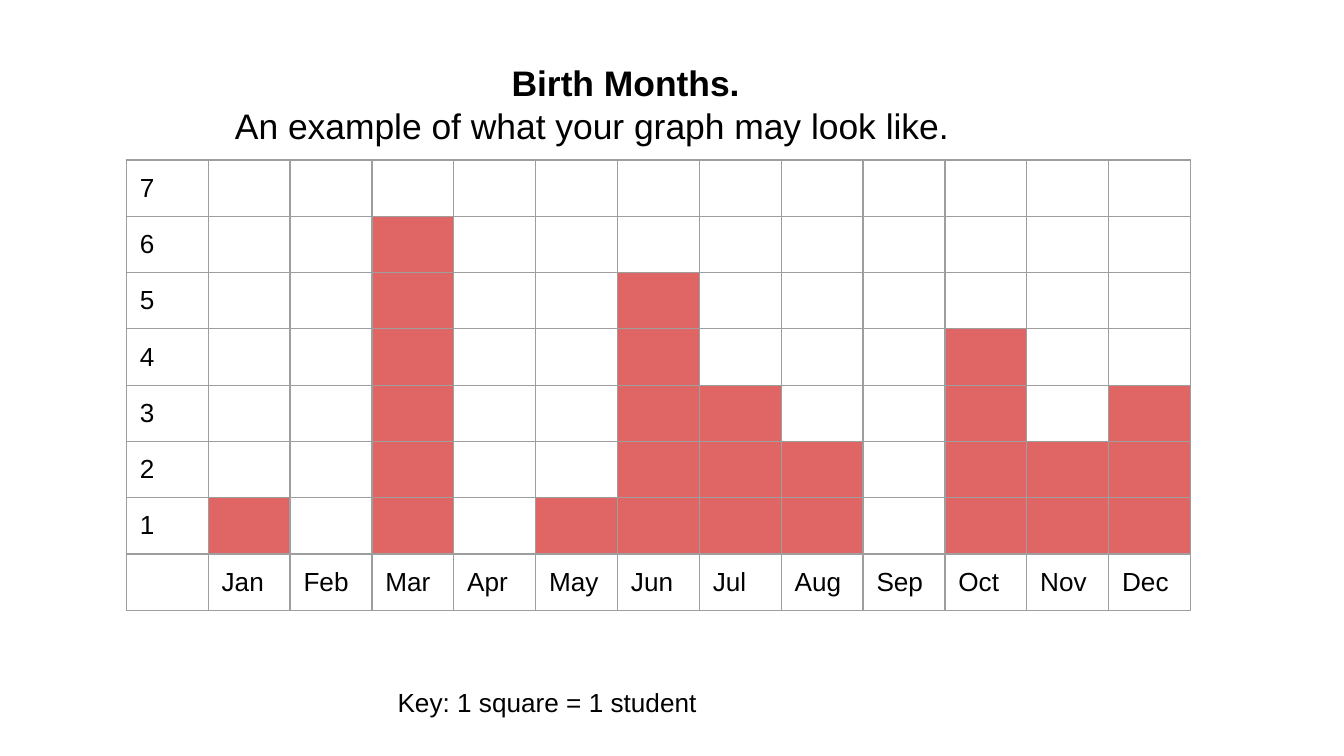
"""Build a birth-month graph from shaded table squares."""
import pptx
import pptx.dml.color
import pptx.enum.text
import pptx.oxml
import pptx.oxml.ns
import pptx.util

Inches = pptx.util.Inches
Pt = pptx.util.Pt
ANCHOR = pptx.enum.text.MSO_ANCHOR
ALIGN = pptx.enum.text.PP_ALIGN
MARGINS = dict.fromkeys(
    ("margin_left", "margin_top", "margin_right", "margin_bottom"), Inches(0.1)
)
BIRTHS = {
    "Jan": 1, "Feb": 0, "Mar": 6, "Apr": 0, "May": 1, "Jun": 5,
    "Jul": 3, "Aug": 2, "Sep": 0, "Oct": 4, "Nov": 2, "Dec": 3,
}
TOP_COUNT = 7


def color(value):
    return pptx.dml.color.RGBColor.from_string(value)


def write(para, text, size, bold=False):
    span = para.add_run()
    span.text = text
    formats = {"name": "Arial", "size": Pt(size), "bold": bold}
    for name, value in formats.items():
        setattr(span.font, name, value)
    span.font.color.rgb = color("000000")


deck = pptx.Presentation()
deck.slide_width = Inches(10)
deck.slide_height = Inches(10 * 9 / 16)
page = deck.slides.add_slide(deck.slide_layouts[6])

columns = len(BIRTHS) + 1
rows = TOP_COUNT + 1
frame = page.shapes.add_table(
    rows, columns, Inches(0.94), Inches(1.19), Inches(7.92), Inches(3.47)
)
table = frame.table
table.first_row = False
table.horz_banding = False
for row in table.rows:
    row.height = Inches(3.35 / rows)

months = list(BIRTHS)
for row in range(rows):
    count = TOP_COUNT - row
    for column in range(columns):
        cell = table.cell(row, column)
        props = cell._tc.get_or_add_tcPr()
        for side in ("lnL", "lnR", "lnT", "lnB"):
            props.append(pptx.oxml.parse_xml(
                f'<a:{side} {pptx.oxml.ns.nsdecls("a")} w="{Pt(0.75)}">'
                f'<a:solidFill><a:srgbClr val="9E9E9E"/></a:solidFill></a:{side}>'
            ))
        if column and 0 < count <= BIRTHS[months[column - 1]]:
            cell.fill.solid()
            cell.fill.fore_color.rgb = color("E06666")
        else:
            cell.fill.background()
        if column == 0:
            label = str(count) if count else ""
        else:
            label = "" if count else months[column - 1]
        if label:
            for name, value in MARGINS.items():
                setattr(cell, name, value)
            write(cell.text_frame.paragraphs[0], label, 14)

texts = [
    ((1.65, 0.35, 6.01, 0.84), ANCHOR.BOTTOM, 19, [
        ("Birth Months.", ALIGN.CENTER, True),
        ("An example of what your graph may look like.", ALIGN.LEFT, False),
    ]),
    ((2.86, 5.01, 3.34, 0.24), ANCHOR.TOP, 14, [
        ("Key: 1 square = 1 student", ALIGN.LEFT, False),
    ]),
]
for place, anchor, size, lines in texts:
    box = page.shapes.add_textbox(*map(Inches, place))
    formats = {**MARGINS, "word_wrap": True, "vertical_anchor": anchor}
    for name, value in formats.items():
        setattr(box.text_frame, name, value)
    for index, (text, align, bold) in enumerate(lines):
        para = box.text_frame.add_paragraph() if index else box.text_frame.paragraphs[0]
        para.alignment = align
        write(para, text, size, bold)

deck.save("out.pptx")
